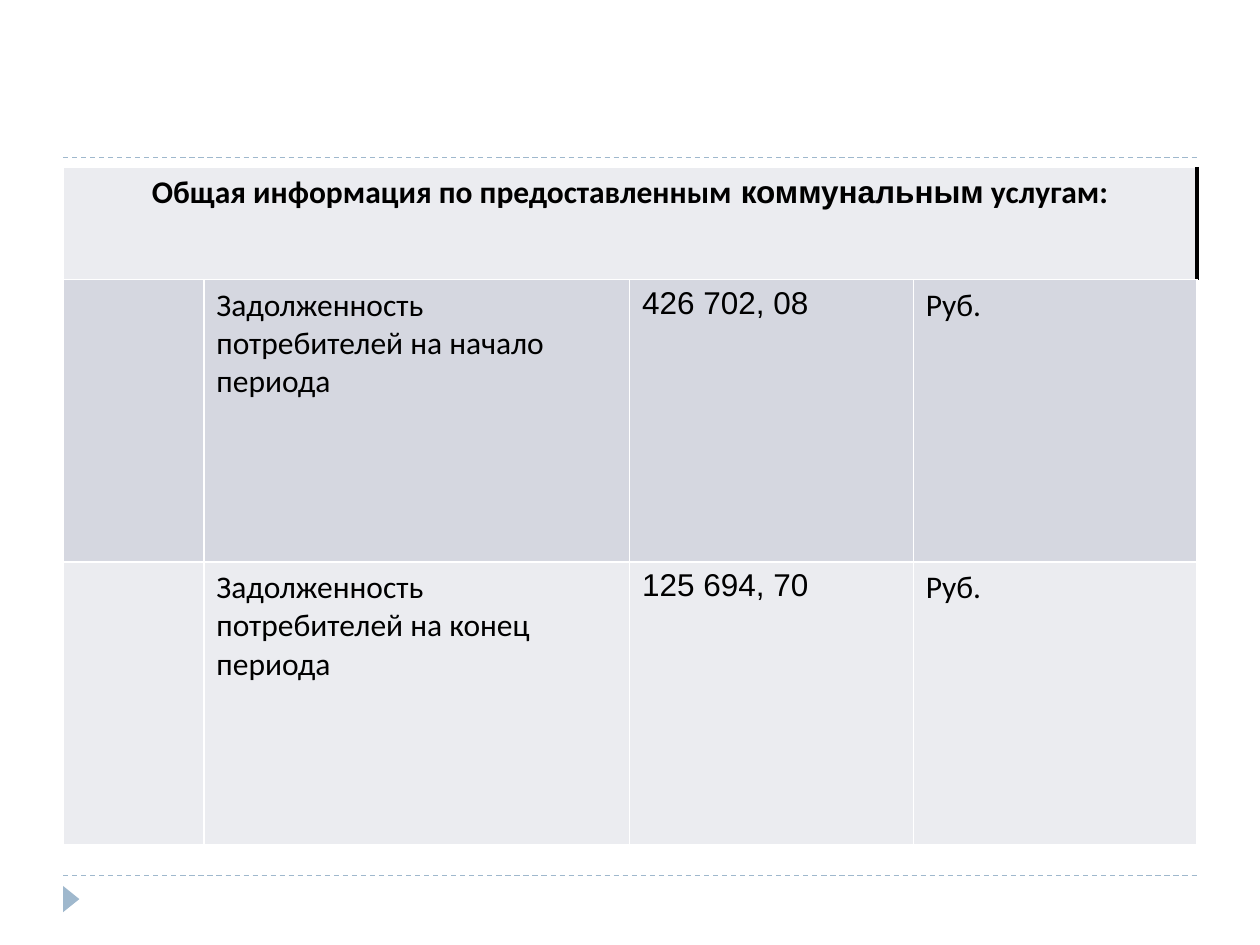
from pptx import Presentation
from pptx.dml.color import RGBColor
from pptx.enum.dml import MSO_LINE
from pptx.enum.shapes import MSO_CONNECTOR, MSO_SHAPE
from pptx.enum.text import PP_ALIGN
from pptx.oxml.ns import qn
from pptx.util import Cm, Pt
from lxml.etree import SubElement

HEADING = [(" Общая информация по предоставленным", "Calibri"),
           (" коммунальным", "Arial"),
           (" услугам: ", "Calibri")]
DEBTS = [("Задолженность потребителей на начало периода", "426 702, 08", "Руб."),
         ("Задолженность потребителей на конец периода", "125 694, 70", "Руб.")]
DEBT_FONTS = ("Calibri", "Arial", "Calibri")

LEFT, WIDTH = 1.27, 22.86
COLUMNS = (2.84, 8.58, 5.72, 5.72)
ROWS = (2.26, 5.69, 5.69)
ROW_FILLS = ("EBECF0", "D5D7E0", "EBECF0")
RULES_Y = (3.17, 17.65)
ACCENT, WHITE, BLACK = "9FB8CD", "FFFFFF", "000000"


def color(value):
    return RGBColor.from_string(value)


def write(p, text, font="Calibri", size=18, bold=False, fill=BLACK, align=PP_ALIGN.LEFT):
    p.alignment = align
    r = p.add_run()
    r.text = text
    r.font.name, r.font.size, r.font.bold = font, Pt(size), bold
    r.font.color.rgb = color(fill)


def format_cell(cell, fill, right=(WHITE, 1)):
    """Set the four borders, then the fill, which must follow them in the XML."""
    tcPr = cell._tc.get_or_add_tcPr()
    white = (WHITE, 1)
    for tag, (line, width) in (("lnL", white), ("lnR", right), ("lnT", white), ("lnB", white)):
        ln = SubElement(tcPr, qn(f"a:{tag}"), w=str(Pt(width)))
        SubElement(SubElement(ln, qn("a:solidFill")), qn("a:srgbClr"), val=line)
    cell.fill.solid()
    cell.fill.fore_color.rgb = color(fill)


def add_rule(s, y):
    rule = s.shapes.add_connector(MSO_CONNECTOR.STRAIGHT, Cm(LEFT), Cm(y),
                                  Cm(LEFT + WIDTH), Cm(y))
    rule.line.color.rgb = color(ACCENT)
    rule.line.width = Pt(0.75)
    rule.line.dash_style = MSO_LINE.DASH
    SubElement(rule._element.spPr, qn("a:effectLst"))


def add_marker(s):
    sp = s.shapes.add_shape(MSO_SHAPE.ISOSCELES_TRIANGLE, Cm(1.17), Cm(17.96), Cm(0.53), Cm(0.33))
    sp.rotation = 90
    sp.shadow.inherit = False
    sp.fill.solid()
    sp.fill.fore_color.rgb = color(ACCENT)
    sp.line.fill.background()


def add_debt_table(s):
    table = s.shapes.add_table(len(ROWS), len(COLUMNS), Cm(LEFT), Cm(3.38),
                               Cm(WIDTH), Cm(sum(ROWS))).table
    for column, width in zip(table.columns, COLUMNS):
        column.width = Cm(width)
    for i, (row, height, fill) in enumerate(zip(table.rows, ROWS, ROW_FILLS)):
        row.height = Cm(height)
        for cell in row.cells:
            format_cell(cell, fill, right=(WHITE, 1) if i else (BLACK, 2.25))

    heading = table.cell(0, 0)
    heading.merge(table.cell(0, len(COLUMNS) - 1))
    for text, font in HEADING:
        write(heading.text_frame.paragraphs[0], text, font, bold=True, align=PP_ALIGN.CENTER)
    for i, debt in enumerate(DEBTS, 1):
        for j, (text, font) in enumerate(zip(debt, DEBT_FONTS), 1):
            write(table.cell(i, j).text_frame.paragraphs[0], text, font)


def main():
    prs = Presentation()
    prs.slide_width, prs.slide_height = Cm(25.4), Cm(19.05)
    s = prs.slides.add_slide(prs.slide_layouts[6])
    for y in RULES_Y:
        add_rule(s, y)
    add_marker(s)
    add_debt_table(s)
    prs.save("out.pptx")


if __name__ == "__main__":
    main()
